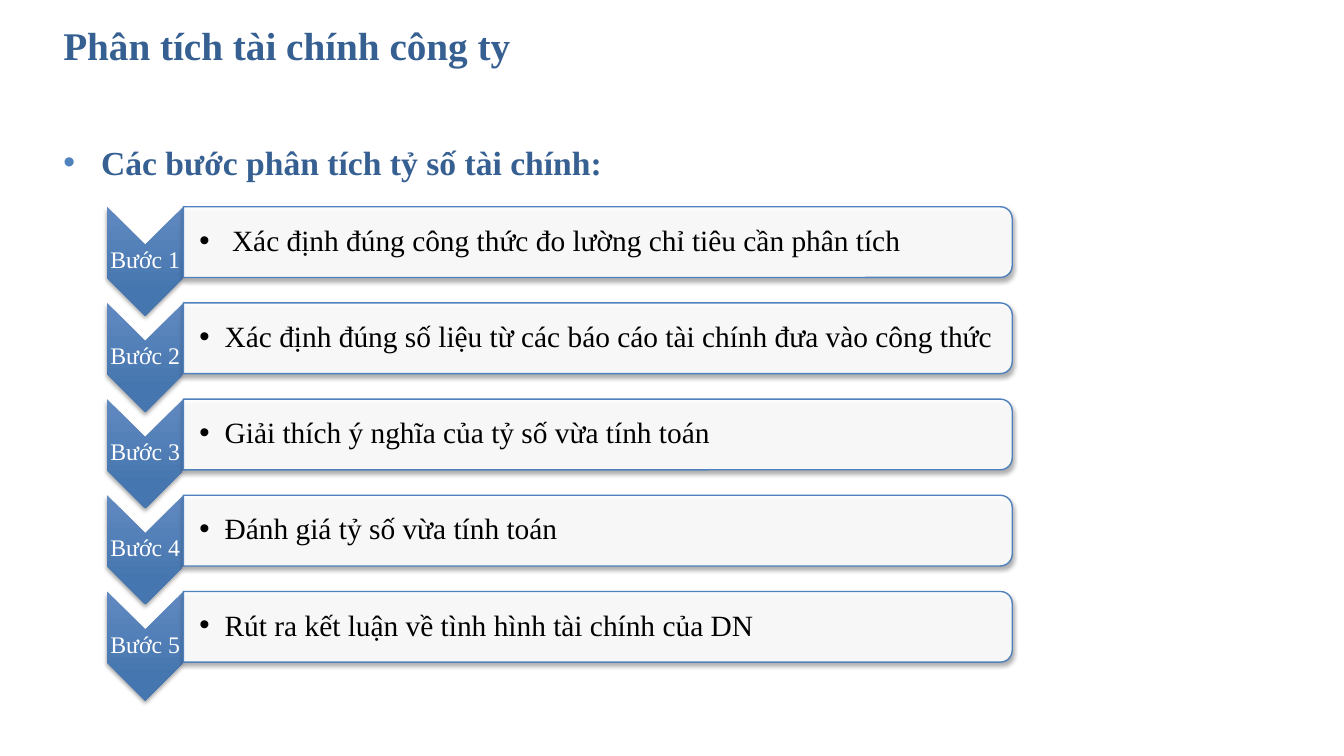
from lxml.etree import SubElement
from pptx import Presentation
from pptx.dml.color import RGBColor
from pptx.enum.shapes import MSO_SHAPE
from pptx.enum.text import MSO_ANCHOR, MSO_AUTO_SIZE, PP_ALIGN
from pptx.oxml.ns import qn
from pptx.util import Pt

TITLE = "Phân tích tài chính công ty"
HEADING = "Các bước phân tích tỷ số tài chính:"
STEPS = [
    ("Bước 1", " Xác định đúng công thức đo lường chỉ tiêu cần phân tích"),
    ("Bước 2", "Xác định đúng số liệu từ các báo cáo tài chính đưa vào công thức"),
    ("Bước 3", "Giải thích ý nghĩa của tỷ số vừa tính toán"),
    ("Bước 4", "Đánh giá tỷ số vừa tính toán"),
    ("Bước 5", "Rút ra kết luận về tình hình tài chính của DN"),
]
COLORS = {
    "heading": "376092", "accent": "4F81BD", "light": "6089C0", "dark": "4676AF",
    "white": "FFFFFF", "black": "000000",
}
FONT = "Times New Roman"

STEP_TOP, STEP_PITCH = 147.7, 68.7
CHEVRON_LEFT, CHEVRON_WIDTH, CHEVRON_HEIGHT = 76.5, 54.5, 78
PANEL_LEFT, PANEL_WIDTH, PANEL_HEIGHT = 131, 592, 50.5
LABEL_TOP, LABEL_HEIGHT = 27, 23


def color(name):
    return RGBColor.from_string(COLORS[name])


def place(box, left, top, width, height):
    box.left, box.top, box.width, box.height = Pt(left), Pt(top), Pt(width), Pt(height)


def add_bullet(para, indent, fill):
    properties = para._p.get_or_add_pPr()
    properties.set("marL", str(Pt(indent)))
    properties.set("indent", str(-Pt(indent)))
    holder = SubElement(properties, qn("a:buClr"))
    SubElement(holder, qn("a:srgbClr"), val=COLORS[fill])
    SubElement(properties, qn("a:buFont"), typeface="Arial")
    SubElement(properties, qn("a:buChar"), char="•")


def write(box, text, size, fill, bold=False, align=PP_ALIGN.LEFT, anchor=MSO_ANCHOR.MIDDLE,
          spacing=1.0, insets=(7.2, 3.6, 7.2, 3.6), indent=0, bullet=None):
    frame = box.text_frame
    frame.word_wrap = True
    frame.auto_size = MSO_AUTO_SIZE.NONE
    frame.vertical_anchor = anchor
    (frame.margin_left, frame.margin_top,
     frame.margin_right, frame.margin_bottom) = map(Pt, insets)
    para = frame.paragraphs[0]
    para.alignment = align
    para.line_spacing = spacing
    para.space_before = Pt(0)
    if bullet:
        add_bullet(para, indent, bullet)
    span = para.add_run()
    span.text = text
    span.font.name = FONT
    span.font.size = Pt(size)
    span.font.bold = bold
    span.font.color.rgb = color(fill)


def add_shadow(shape):
    effects = SubElement(shape._element.spPr, qn("a:effectLst"))
    shadow = SubElement(effects, qn("a:outerShdw"), blurRad=str(Pt(3)), dist=str(Pt(2)),
                        dir="5400000", rotWithShape="0")
    shade = SubElement(shadow, qn("a:srgbClr"), val=COLORS["black"])
    SubElement(shade, qn("a:alpha"), val="35000")


def add_turned_shape(page, kind, left, top, width, height):
    shape = page.shapes.add_shape(
        kind, Pt(left + (width - height) / 2), Pt(top + (height - width) / 2),
        Pt(height), Pt(width))
    shape.rotation = 90
    return shape


def add_chevron(page, top):
    chevron = add_turned_shape(page, MSO_SHAPE.CHEVRON, CHEVRON_LEFT, top,
                               CHEVRON_WIDTH, CHEVRON_HEIGHT)
    chevron.fill.gradient()
    chevron.fill.gradient_angle = 270
    for stop, (name, position) in zip(chevron.fill.gradient_stops,
                                      [("light", 0), ("dark", 0.78)]):
        stop.color.rgb = color(name)
        stop.position = position
    chevron._element.spPr.find(qn("a:gradFill")).set("rotWithShape", "0")
    chevron.line.fill.background()
    add_shadow(chevron)


def add_panel(page, top):
    panel = add_turned_shape(page, MSO_SHAPE.ROUND_2_SAME_RECTANGLE, PANEL_LEFT, top,
                             PANEL_WIDTH, PANEL_HEIGHT)
    panel.fill.solid()
    panel.fill.fore_color.rgb = color("white")
    shade = panel._element.spPr.find(qn("a:solidFill")).find(qn("a:srgbClr"))
    SubElement(shade, qn("a:alpha"), val="90000")
    panel.line.color.rgb = color("accent")
    panel.line.width = Pt(1)
    add_shadow(panel)


def add_text(page, text, left, top, width, height, **style):
    box = page.shapes.add_textbox(Pt(left), Pt(top), Pt(width), Pt(height))
    write(box, text, **style)


def add_step(page, index, label, action):
    top = STEP_TOP + index * STEP_PITCH
    add_chevron(page, top)
    add_text(page, label, CHEVRON_LEFT, top + LABEL_TOP, CHEVRON_WIDTH, LABEL_HEIGHT,
             size=17, fill="white", align=PP_ALIGN.CENTER, spacing=0.9, insets=(0.8,) * 4)
    add_panel(page, top)
    add_text(page, action, PANEL_LEFT, top + 2.3, PANEL_WIDTH - 2.5, PANEL_HEIGHT - 5,
             size=21, fill="black", spacing=0.9, insets=(11.5, 0.8, 0.8, 0.8),
             indent=18, bullet="black")


def main():
    deck = Presentation()
    deck.slide_width, deck.slide_height = Pt(960), Pt(540)
    page = deck.slides.add_slide(deck.slide_layouts[1])
    title, body = page.placeholders
    place(title, 38, 2, 902, 60)
    write(title, TITLE, size=28, fill="heading", bold=True)
    place(body, 38, 83.5, 893, 417)
    write(body, HEADING, size=24, fill="heading", bold=True, anchor=MSO_ANCHOR.TOP,
          spacing=1.5, indent=27, bullet="accent")
    for index, (label, action) in enumerate(STEPS):
        add_step(page, index, label, action)
    deck.save("out.pptx")


if __name__ == "__main__":
    main()
